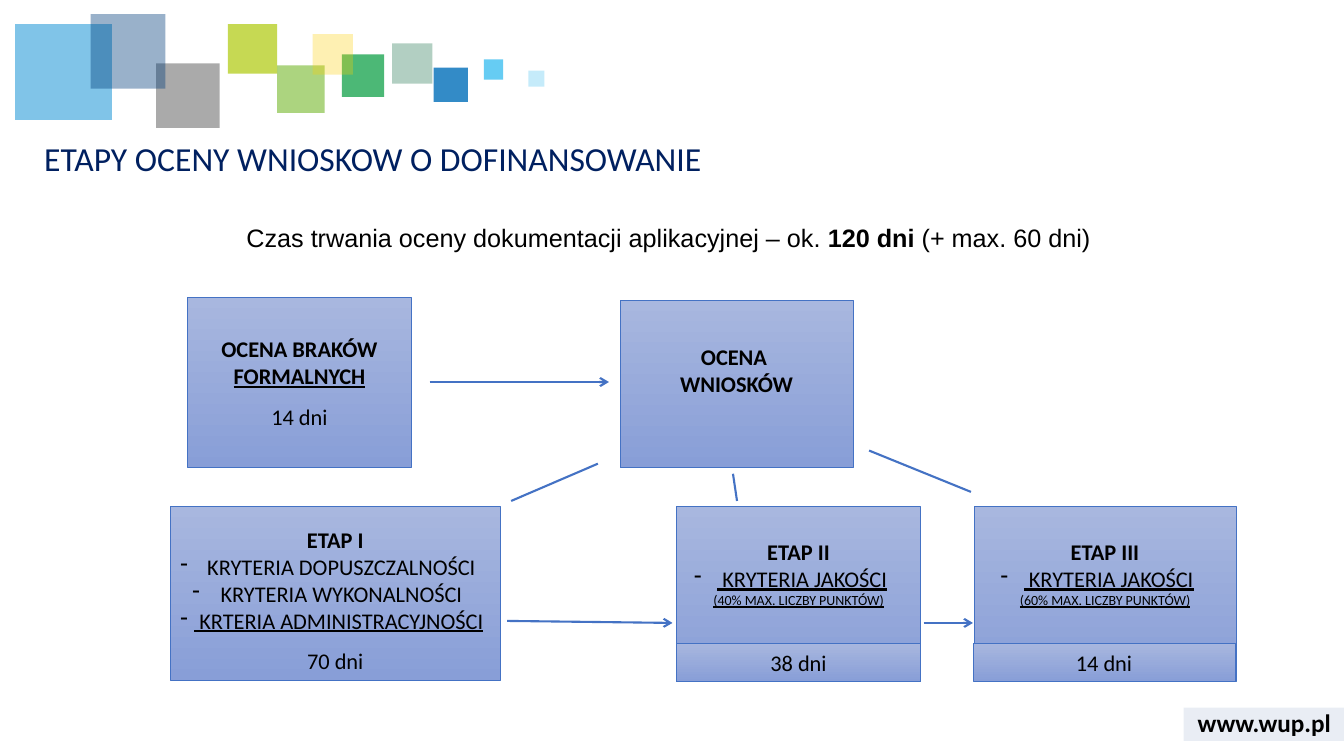
from dataclasses import dataclass

from lxml import etree
from pptx import Presentation
from pptx import util as u
from pptx.dml.color import RGBColor
from pptx.enum import shapes, text
from pptx.oxml import ns


@dataclass(frozen=True)
class Theme:
    ink: str = "000000"
    title: str = "002060"
    line: str = "4472C4"
    top: str = "A8B7DF"
    base: str = "889ED7"
    body: str = "Calibri"
    lead: str = "Arial"
    big: int = 24
    mid: int = 18
    norm: int = 16
    tiny: int = 10


T = Theme()


@dataclass(frozen=True)
class Span:
    text: str
    bold: bool = False
    under: bool = False


@dataclass(frozen=True)
class Para:
    spans: tuple[Span, ...]
    size: int = T.norm
    gap: float = 1.0
    dash: bool = False
    font: str = T.body
    color: str = T.ink
    left: bool = False


@dataclass(frozen=True)
class Tile:
    x: float
    y: float
    w: float
    h: float
    color: str
    alpha: int


@dataclass(frozen=True)
class Box:
    x: float
    y: float
    w: float
    h: float
    paras: tuple[Para, ...]
    foot: float = 0.05  # bottom inset


@dataclass(frozen=True)
class Link:
    x1: float
    y1: float
    x2: float
    y2: float
    arrow: bool = False


def line(words: str, bold: bool = False, under: bool = False, **opts) -> Para:
    return Para((Span(words, bold, under),), **opts)


def stage(name: str, share: str) -> tuple[Para, ...]:
    return (line(name, bold=True, gap=1.5),
            line(" KRYTERIA JAKOŚCI", under=True, dash=True),
            line(f"({share} MAX. LICZBY PUNKTÓW)", under=True, size=T.tiny))


TILES = (
    Tile(3.89, 0.43, 0.4, 0.4, "006138", 30),
    Tile(4.3, 0.67, 0.34, 0.34, "006EB9", 80),
    Tile(3.39, 0.54, 0.42, 0.42, "009A3C", 70),
    Tile(0.15, 0.24, 0.96, 0.95, "028BD3", 50),
    Tile(2.75, 0.65, 0.47, 0.47, "75B82A", 60),
    Tile(1.55, 0.63, 0.63, 0.64, "575757", 50),
    Tile(0.9, 0.14, 0.74, 0.74, "003D7C", 40),
    Tile(4.8, 0.59, 0.19, 0.2, "40C0F1", 80),
    Tile(2.26, 0.24, 0.49, 0.49, "AFCA0B", 70),
    Tile(3.1, 0.34, 0.4, 0.4, "FED000", 30),
    Tile(5.24, 0.7, 0.16, 0.16, "40C0F1", 30),
    Tile(11.74, 7.02, 1.6, 0.33, "2F5597", 10),
)

BOXES = (
    Box(1.86, 2.95, 2.22, 1.69, (
        Para((Span("OCENA BRAKÓW ", True), Span("FORMALNYCH", True, True))),
        line("14 dni", gap=1.5))),
    Box(6.15, 2.98, 2.31, 1.66, (
        line("OCENA ", bold=True), line("WNIOSKÓW", bold=True)), 0.32),
    Box(1.69, 5.02, 3.27, 1.73, (
        line("ETAP I", bold=True, gap=1.5),
        line(" KRYTERIA DOPUSZCZALNOŚCI", dash=True),
        line(" KRYTERIA WYKONALNOŚCI", dash=True),
        line(" KRTERIA ADMINISTRACYJNOŚCI", under=True, dash=True),
        line("70 dni", gap=1.5))),
    Box(6.71, 5.02, 2.42, 1.74, stage("ETAP II", "40%"), 0.59),
    Box(9.66, 5.02, 2.6, 1.74, stage("ETAP III", "60%"), 0.59),
    Box(6.71, 6.38, 2.42, 0.38, (line("38 dni"),)),
    Box(9.65, 6.38, 2.6, 0.38, (line("14 dni"),)),
)

LINKS = (
    Link(4.26, 3.79, 6.04, 3.79, True),
    Link(5.03, 6.16, 6.67, 6.18, True),
    Link(9.16, 6.18, 9.65, 6.18, True),
    Link(5.93, 4.6, 5.07, 4.97),
    Link(7.27, 4.7, 7.31, 4.97),
    Link(8.62, 4.47, 9.63, 4.88),
)


def write(frame, paras: tuple[Para, ...], middle: bool = True) -> None:
    frame.word_wrap = True
    anchor = text.MSO_ANCHOR
    frame.vertical_anchor = anchor.MIDDLE if middle else anchor.TOP
    for i, item in enumerate(paras):
        para = frame.paragraphs[0] if i == 0 else frame.add_paragraph()
        para.alignment = text.PP_ALIGN.LEFT if item.left else text.PP_ALIGN.CENTER
        para.line_spacing = item.gap
        if item.dash:
            props = para._p.get_or_add_pPr()
            props.set("marL", str(u.Inches(0.07)))
            props.set("indent", str(u.Inches(-0.23)))
            etree.SubElement(props, ns.qn("a:buChar")).set("char", "-")
        para.font.name = item.font
        para.font.size = u.Pt(item.size)
        para.font.color.rgb = RGBColor.from_string(item.color)
        for span in item.spans:
            run = para.add_run()
            run.text = span.text
            run.font.bold = span.bold
            run.font.underline = span.under


def rect(slide, part: Tile | Box):
    shape = slide.shapes.add_shape(shapes.MSO_SHAPE.RECTANGLE, u.Inches(part.x),
                                   u.Inches(part.y), u.Inches(part.w), u.Inches(part.h))
    shape.shadow.inherit = False
    return shape


def tile(slide, part: Tile) -> None:
    shape = rect(slide, part)
    shape.line.fill.background()
    shape.fill.solid()
    shape.fill.fore_color.rgb = RGBColor.from_string(part.color)
    tint = shape._element.spPr.find(".//" + ns.qn("a:srgbClr"))
    etree.SubElement(tint, ns.qn("a:alpha")).set("val", str(part.alpha * 1000))


def box(slide, part: Box) -> None:
    shape = rect(slide, part)
    shape.fill.gradient()
    shape.fill.gradient_angle = 270
    for stop, color in zip(shape.fill.gradient_stops, (T.top, T.base)):
        stop.color.rgb = RGBColor.from_string(color)
    shape.line.color.rgb = RGBColor.from_string(T.line)
    shape.line.width = u.Pt(0.5)
    shape.text_frame.margin_bottom = u.Inches(part.foot)
    write(shape.text_frame, part.paras)


def link(slide, part: Link) -> None:
    ends = (u.Inches(v) for v in (part.x1, part.y1, part.x2, part.y2))
    wire = slide.shapes.add_connector(shapes.MSO_CONNECTOR.STRAIGHT, *ends)
    wire.line.color.rgb = RGBColor.from_string(T.line)
    wire.line.width = u.Pt(1.5)
    if part.arrow:
        etree.SubElement(wire.line._get_or_add_ln(), ns.qn("a:tailEnd")).set("type", "arrow")
    etree.SubElement(wire._element.spPr, ns.qn("a:effectLst"))


def label(slide, x: float, y: float, w: float, h: float, para: Para, middle: bool = False) -> None:
    area = slide.shapes.add_textbox(u.Inches(x), u.Inches(y), u.Inches(w), u.Inches(h))
    write(area.text_frame, (para,), middle)


def main() -> None:
    deck = Presentation()
    deck.slide_width, deck.slide_height = u.Inches(13.33), u.Inches(7.5)
    slide = deck.slides.add_slide(deck.slide_layouts[6])

    # Header mosaic and footer band
    for part in TILES:
        tile(slide, part)
    label(slide, 11.74, 6.97, 1.6, 0.4, line("www.wup.pl", bold=True, size=T.mid), True)

    # Title and lead sentence
    label(slide, 0.34, 1.36, 12.41, 0.55, line(
        "ETAPY OCENY WNIOSKOW O DOFINANSOWANIE",
        size=T.big, gap=0.9, color=T.title, left=True))
    label(slide, 1.01, 2.16, 11.24, 0.4, Para((
        Span("Czas trwania oceny dokumentacji aplikacyjnej – ok. "),
        Span("120 dni ", True), Span("(+ max. 60 dni)")), T.mid, font=T.lead))

    # Stages and the links between them
    for part in BOXES:
        box(slide, part)
    for part in LINKS:
        link(slide, part)
    deck.save("out.pptx")


if __name__ == "__main__":
    main()
